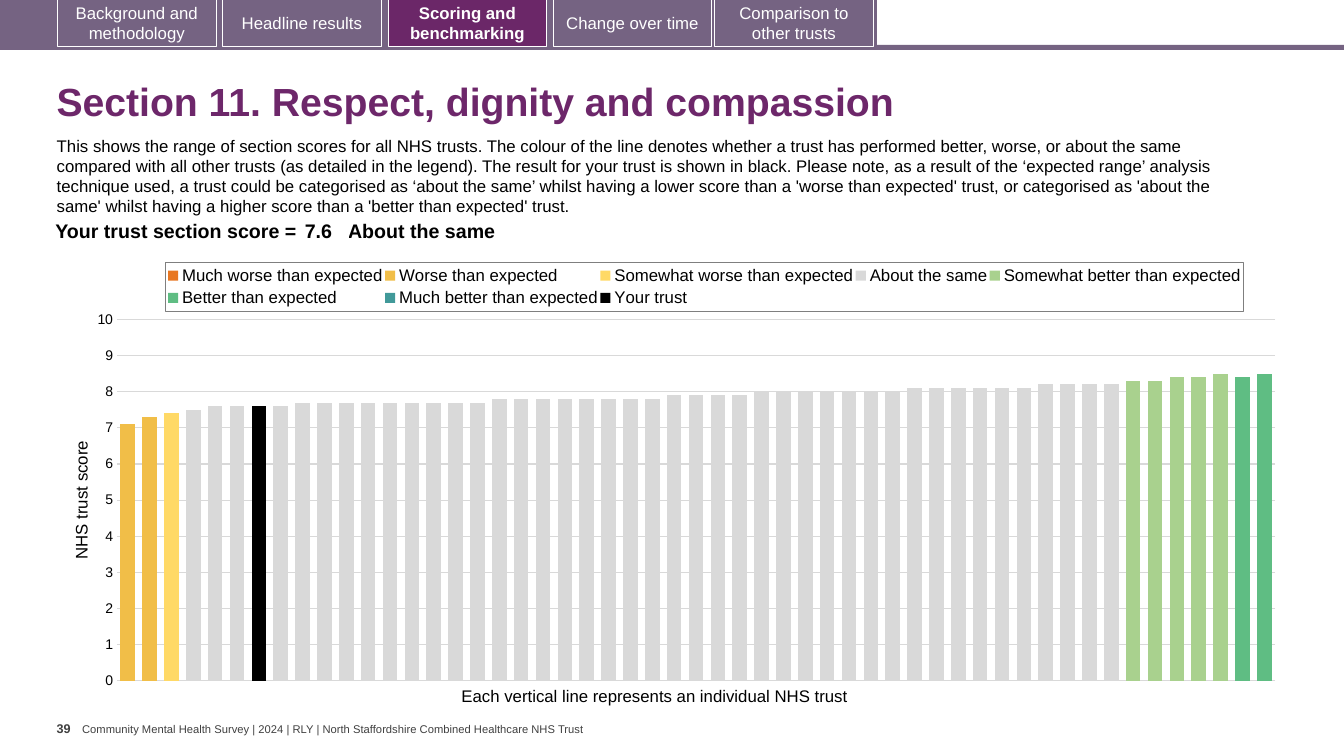
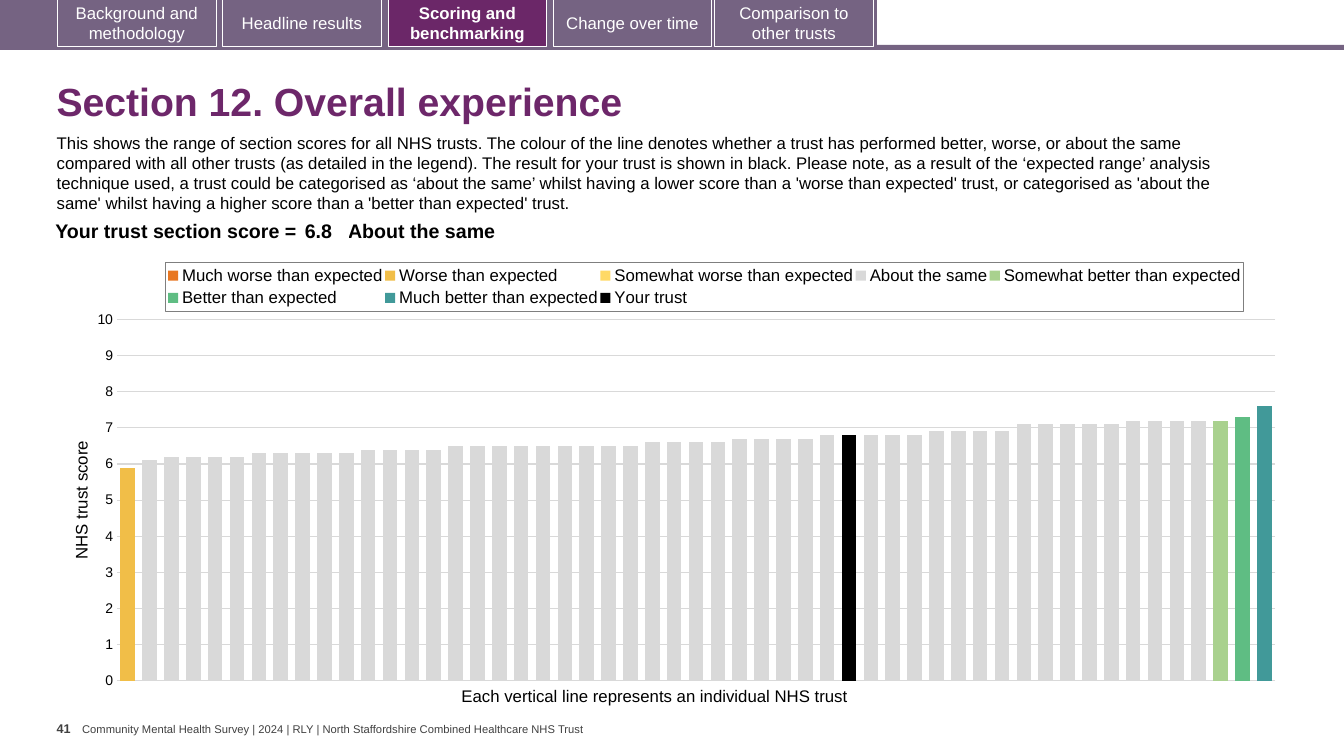
from copy import deepcopy
from dataclasses import dataclass

from lxml import etree
from pptx import Presentation
from pptx.chart.axis import ValueAxis
from pptx.chart.data import CategoryChartData
from pptx.dml.color import RGBColor
from pptx.enum.chart import XL_CHART_TYPE, XL_LEGEND_POSITION, XL_TICK_LABEL_POSITION, XL_TICK_MARK
from pptx.enum.shapes import MSO_SHAPE
from pptx.enum.text import MSO_ANCHOR, MSO_AUTO_SIZE, PP_ALIGN
from pptx.oxml import parse_xml
from pptx.oxml.ns import nsdecls, qn
from pptx.util import Cm, Pt

COLUMNS, LEGEND_TOP = XL_CHART_TYPE.COLUMN_CLUSTERED, XL_LEGEND_POSITION.TOP
NO_TICKS, NO_LABELS = XL_TICK_MARK.NONE, XL_TICK_LABEL_POSITION.NONE
RECTANGLE, NO_AUTOFIT = MSO_SHAPE.RECTANGLE, MSO_AUTO_SIZE.NONE
TOP, MIDDLE = MSO_ANCHOR.TOP, MSO_ANCHOR.MIDDLE
LEFT, CENTER, RIGHT = PP_ALIGN.LEFT, PP_ALIGN.CENTER, PP_ALIGN.RIGHT


@dataclass(frozen=True)
class Theme:
    font: str = "Arial"
    band: str = "756382"
    active_tab: str = "6B2768"
    title: str = "6D276A"
    text: str = "000000"
    footer: str = "404040"
    white: str = "FFFFFF"
    grid: str = "D9D9D9"
    legend_line: str = "7F7F7F"
    title_size: int = 28
    score_size: int = 14
    body_size: int = 12
    axis_size: int = 10
    number_size: int = 9
    footer_size: int = 8


THEME = Theme()

# Result bands in order of performance, with their colours
BANDS = {
    "Much worse than expected": "E87722", "Worse than expected": "F1BE48",
    "Somewhat worse than expected": "FFD966", "About the same": "D9D9D9",
    "Somewhat better than expected": "A9D18E", "Better than expected": "5FBD83",
    "Much better than expected": "419999",
}
YOUR_TRUST, YOUR_TRUST_COLOR = "Your trust", "000000"

TABS = ["Background and methodology", "Headline results", "Scoring and benchmarking",
        "Change over time", "Comparison to other trusts"]
TAB_LEFTS = [1.45, 5.61, 9.78, 13.94, 18.01]
ACTIVE_TAB = "Scoring and benchmarking"
FOOTER = ("Community Mental Health Survey | 2024 | RLY | "
          "North Staffordshire Combined Healthcare NHS Trust")
DESCRIPTION = (
    "This shows the range of section scores for all NHS trusts. The colour of the line denotes "
    "whether a trust has performed better, worse, or about the same compared with all other trusts "
    "(as detailed in the legend). The result for your trust is shown in black. Please note, as a "
    "result of the ‘expected range’ analysis technique used, a trust could be categorised as ‘about "
    "the same’ whilst having a lower score than a 'worse than expected' trust, or categorised as "
    "'about the same' whilst having a higher score than a 'better than expected' trust.")

# Each section lists its scores by band; trust_index is the place of your trust
SECTIONS = [
    {"title": "Section 11. Respect, dignity and compassion", "number": "39",
     "description_top": 3.28, "trust_index": 6, "score": 7.6, "result": "About the same",
     "scores": {
         "Worse than expected": [7.1, 7.3], "Somewhat worse than expected": [7.4],
         "About the same": ([7.5] + [7.6] * 4 + [7.7] * 9 + [7.8] * 8 + [7.9] * 4
                            + [8] * 7 + [8.1] * 6 + [8.2] * 4),
         "Somewhat better than expected": [8.3, 8.3, 8.4, 8.4, 8.5],
         "Better than expected": [8.4, 8.5]}},
    {"title": "Section 12. Overall experience", "number": "41",
     "description_top": 3.21, "trust_index": 33, "score": 6.8, "result": "About the same",
     "scores": {
         "Worse than expected": [5.9],
         "About the same": ([6.1] + [6.2] * 4 + [6.3] * 5 + [6.4] * 4 + [6.5] * 9 + [6.6] * 4
                            + [6.7] * 4 + [6.8] * 5 + [6.9] * 4 + [7.1] * 5 + [7.2] * 4),
         "Somewhat better than expected": [7.2], "Better than expected": [7.3],
         "Much better than expected": [7.6]}},
]


def rgb(color):
    return RGBColor.from_string(color)


def style_font(font, size, color=THEME.text, bold=False):
    font.name, font.size, font.bold = THEME.font, Pt(size), bold
    font.color.rgb = rgb(color)


def set_margins(target, horizontal, vertical):
    target.margin_left = target.margin_right = Cm(horizontal)
    target.margin_top = target.margin_bottom = Cm(vertical)


def add_text(slide, box, text, size, color=THEME.text, bold=False,
             margins=(0.25, 0.13), wrap=False, anchor=TOP):
    frame = slide.shapes.add_textbox(*map(Cm, box)).text_frame
    frame.text = text
    frame.word_wrap, frame.vertical_anchor = wrap, anchor
    set_margins(frame, *margins)
    style_font(frame.paragraphs[0].runs[0].font, size, color, bold)


def add_rectangle(slide, box, fill):
    shape = slide.shapes.add_shape(RECTANGLE, *map(Cm, box))
    shape.shadow.inherit = False
    shape.fill.solid()
    shape.fill.fore_color.rgb = rgb(fill)
    shape.line.fill.background()
    return shape


def add_tab(slide, box, label):
    active = label == ACTIVE_TAB
    shape = add_rectangle(slide, box, THEME.active_tab if active else THEME.band)
    shape.line.color.rgb = rgb(THEME.white)
    shape.line.width = Pt(0.75)
    frame = shape.text_frame
    frame.text = label
    frame.word_wrap, frame.vertical_anchor = True, MIDDLE
    frame.paragraphs[0].alignment = CENTER
    style_font(frame.paragraphs[0].runs[0].font, THEME.body_size, THEME.white, active)


def furnish_layout(layout, slide):
    """Build the shared band, tabs and footer on a slide and move them to its layout."""
    own_shapes = len(slide.shapes)
    add_rectangle(slide, (0, 1.13, 33.87, 0.13), THEME.band)
    add_rectangle(slide, (0, 0, 22.1, 1.19), THEME.band)
    for label, left in zip(TABS, TAB_LEFTS):
        add_tab(slide, (left, -0.03, 4, 1.2), label)
    add_text(slide, (2.07, 18.2, 12.83, 0.33), FOOTER, THEME.footer_size,
             THEME.footer, margins=(0, 0), anchor=MIDDLE)
    for shape_id, shape in enumerate(list(slide.shapes)[own_shapes:], start=101):
        shape.element.nvSpPr.cNvPr.set("id", str(shape_id))
        layout.shapes.element.append(shape.element)


def fill_title(slide, box, text):
    title = slide.shapes.title
    title.left, title.top, title.width, title.height = map(Cm, box)
    frame = title.text_frame
    frame.text = text
    frame.auto_size, frame.vertical_anchor = NO_AUTOFIT, MIDDLE
    paragraph = frame.paragraphs[0]
    paragraph.alignment, paragraph.line_spacing = LEFT, 0.9
    style_font(paragraph.runs[0].font, THEME.title_size, THEME.title, True)


def add_score_table(slide, box, section):
    table = slide.shapes.add_table(1, 3, *map(Cm, box)).table
    table.first_row = table.horz_banding = False
    cells = [("Your trust section score =", 6.68, RIGHT, 0.1),
             (f"{section['score']:.1f}", 1.19, LEFT, 0.1),
             (section["result"], 21.82, LEFT, 0)]
    for index, (text, width, alignment, margin) in enumerate(cells):
        table.columns[index].width = Cm(width)
        cell = table.cell(0, index)
        cell.text = text
        cell.fill.background()
        set_margins(cell, margin, 0.1)
        paragraph = cell.text_frame.paragraphs[0]
        paragraph.alignment = alignment
        style_font(paragraph.runs[0].font, THEME.score_size, bold=True)


def score_data(section):
    """Lay the bands end to end, each series filling only its own places."""
    total = sum(map(len, section["scores"].values()))
    data = CategoryChartData()
    data.categories = [str(number) for number in range(1, total + 1)]
    start = 0
    for band in BANDS:
        scores = section["scores"].get(band, [])
        end = start + len(scores)
        data.add_series(band, [None] * start + scores + [None] * (total - end))
        start = end
    trust = [None] * total
    trust[section["trust_index"]] = section["score"]
    data.add_series(YOUR_TRUST, trust)
    return data


def set_layout(parent, index, x, y, width, height, inner=False):
    for old_layout in parent.findall(qn("c:layout")):
        parent.remove(old_layout)
    layout = parse_xml(f"<c:layout {nsdecls('c')}><c:manualLayout/></c:layout>")
    values = [("layoutTarget", "inner")] if inner else []
    values += [("xMode", "edge"), ("yMode", "edge"), ("x", x), ("y", y), ("w", width), ("h", height)]
    for tag, value in values:
        etree.SubElement(layout[0], qn(f"c:{tag}")).set("val", str(value))
    parent.insert(index, layout)


def style_value_axis(chart):
    axis = chart.value_axis
    axis.minimum_scale, axis.maximum_scale, axis.major_unit = 0, 10, 1
    axis.major_tick_mark = axis.minor_tick_mark = NO_TICKS
    axis.format.line.fill.background()
    axis.major_gridlines.format.line.color.rgb = rgb(THEME.grid)
    axis.major_gridlines.format.line.width = Pt(0.75)
    style_font(axis.tick_labels.font, THEME.axis_size)
    frame = axis.axis_title.text_frame
    frame.text = "NHS trust score"
    style_font(frame.paragraphs[0].runs[0].font, THEME.body_size)
    chart.element.xpath(".//c:valAx/c:title//a:bodyPr")[0].set("rot", "-5400000")


def style_legend(chart):
    chart.has_legend = True
    chart.legend.position = LEGEND_TOP
    chart.legend.include_in_layout = False
    style_font(chart.legend.font, THEME.body_size)
    legend = chart.element.xpath(".//c:legend")[0]
    set_layout(legend, 1, 0.08, 0.03, 0.88, 0.11)
    legend.find(qn("c:txPr")).addprevious(parse_xml(
        f"<c:spPr {nsdecls('c', 'a')}><a:ln w='9525'><a:solidFill>"
        f"<a:srgbClr val='{THEME.legend_line}'/></a:solidFill></a:ln></c:spPr>"))


def move_trust_to_right_axis(plot_area):
    """Give the last series its own columns on an unlabelled second axis."""
    columns = plot_area.find(qn("c:barChart"))
    axes = [plot_area.find(qn(tag)) for tag in ("c:catAx", "c:valAx")]
    right_columns, right_category, right_value = map(deepcopy, [columns, *axes])
    columns.remove(columns.findall(qn("c:ser"))[-1])
    for series in right_columns.findall(qn("c:ser"))[:-1]:
        right_columns.remove(series)
    columns.addnext(right_columns)
    axes[1].addnext(right_value)
    right_value.addnext(right_category)
    new_ids = {axis.find(qn("c:axId")).get("val"): str(5001 + i) for i, axis in enumerate(axes)}
    for part in (right_columns, right_category, right_value):
        for reference in part.findall(qn("c:axId")) + part.findall(qn("c:crossAx")):
            reference.set("val", new_ids[reference.get("val")])
    right_value.find(qn("c:axPos")).set("val", "r")
    right_value.find(qn("c:crosses")).set("val", "max")
    axis = ValueAxis(right_value)
    axis.has_title = axis.has_major_gridlines = False
    axis.tick_label_position = NO_LABELS


def add_score_chart(slide, box, section):
    chart = slide.shapes.add_chart(COLUMNS, *map(Cm, box), score_data(section)).chart
    chart.has_title = False
    style_font(chart.font, THEME.axis_size)
    chart.category_axis.visible = False
    plot = chart.plots[0]
    plot.gap_width, plot.overlap, plot.vary_by_categories = 50, 100, False
    for series, color in zip(plot.series, [*BANDS.values(), YOUR_TRUST_COLOR]):
        series.format.fill.solid()
        series.format.fill.fore_color.rgb = rgb(color)
    style_value_axis(chart)
    style_legend(chart)
    plot_area = chart.element.xpath(".//c:plotArea")[0]
    set_layout(plot_area, 0, 0.04, 0.158, 0.946, 0.808, inner=True)
    move_trust_to_right_axis(plot_area)


def build_section(slide, section):
    fill_title(slide, (1.17, 1.7, 31.72, 1.83), section["title"])
    add_text(slide, (1.43, 18.03, 0.64, 1.02), section["number"], THEME.number_size,
             THEME.footer, True, margins=(0, 0.13))
    add_text(slide, (1.18, section["description_top"], 30.81, 2.31), DESCRIPTION,
             THEME.body_size, wrap=True)
    add_text(slide, (11.38, 17.15, 10.44, 0.76),
             "Each vertical line represents an individual NHS trust", THEME.body_size)
    add_score_chart(slide, (1.71, 6.27, 30.86, 11.27), section)
    add_score_table(slide, (0.9, 5.46, 29.69, 0.56), section)


def main():
    presentation = Presentation()
    presentation.slide_width, presentation.slide_height = Cm(33.87), Cm(19.05)
    layout = presentation.slide_layouts.get_by_name("Title Only")
    slides = [presentation.slides.add_slide(layout) for _ in SECTIONS]
    furnish_layout(layout, slides[0])
    for slide, section in zip(slides, SECTIONS):
        build_section(slide, section)
    presentation.save("out.pptx")


if __name__ == "__main__":
    main()
